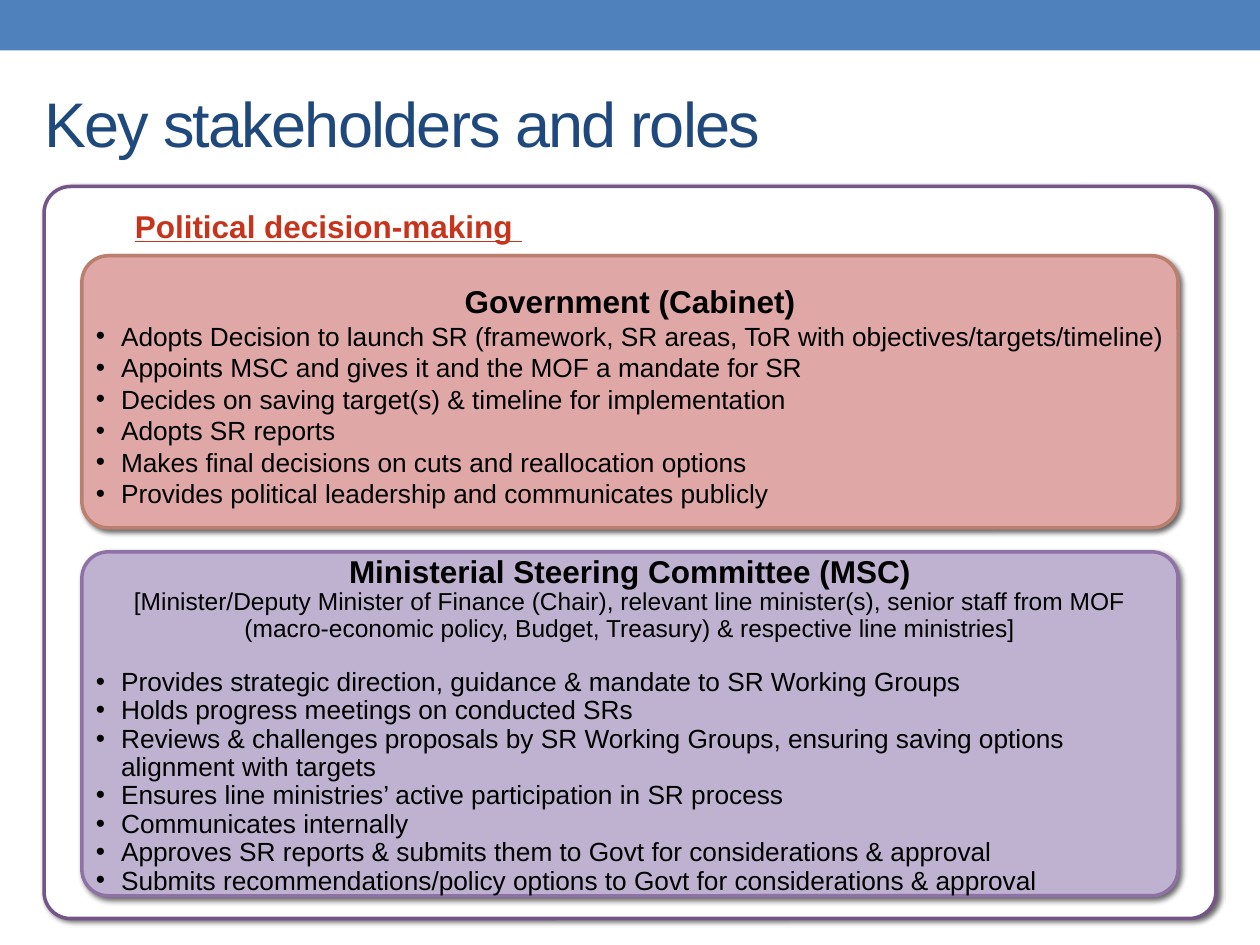
from dataclasses import dataclass

from lxml.etree import SubElement
from pptx import Presentation
from pptx.dml.color import RGBColor
from pptx.enum.shapes import MSO_SHAPE as Shape
from pptx.enum.text import MSO_ANCHOR as Anchor, PP_ALIGN as Align
from pptx.oxml import parse_xml
from pptx.oxml.ns import nsdecls, qn
from pptx.util import Inches, Pt


@dataclass(frozen=True)
class Theme:
    font: str = "Arial"
    band: str = "4F81BD"
    title: str = "1F497D"
    accent: str = "C7341B"
    text: str = "000000"
    frame: tuple = ("FFFFFF", "755587")
    cabinet: tuple = ("DFA7A6", "BA7F6D")
    committee: tuple = ("BFB1D0", "8E71A5")
    title_size: int = 36
    heading_size: int = 18
    bullet_size: int = 15
    note_size: int = 14


THEME = Theme()

CABINET_ROLES = [
    "Adopts Decision to launch SR (framework, SR areas, ToR with objectives/targets/timeline)",
    "Appoints MSC and gives it and the MOF a mandate for SR",
    "Decides on saving target(s) & timeline for implementation",
    "Adopts SR reports",
    "Makes final decisions on cuts and reallocation options",
    "Provides political leadership and communicates publicly",
]
COMMITTEE_MEMBERS = (
    "[Minister/Deputy Minister of Finance (Chair), relevant line minister(s), senior staff from MOF "
    "(macro-economic policy, Budget, Treasury) & respective line ministries]"
)
COMMITTEE_ROLES = [
    "Provides strategic direction, guidance & mandate to SR Working Groups",
    "Holds progress meetings on conducted SRs",
    "Reviews & challenges proposals by SR Working Groups, ensuring saving options alignment with targets",
    "Ensures line ministries’ active participation in SR process",
    "Communicates internally",
    "Approves SR reports & submits them to Govt for considerations & approval",
    "Submits recommendations/policy options to Govt for considerations & approval",
]


def set_font(text, size, color=THEME.text, bold=False):
    """Format a paragraph or a run."""
    font = text.font
    font.name = THEME.font
    font.size = Pt(size)
    font.bold = bold
    font.color.rgb = RGBColor.from_string(color)


def prepare_frame(shape, anchor):
    frame = shape.text_frame
    frame.word_wrap = True
    frame.vertical_anchor = anchor
    frame.margin_left = frame.margin_right = Inches(0.05)
    frame.margin_top = frame.margin_bottom = Inches(0.05)
    return frame


def add_shadow(shape):
    shape._element.spPr.append(parse_xml(
        f'<a:effectLst {nsdecls("a")}><a:outerShdw blurRad="38100" dist="25400" dir="2700000">'
        '<a:srgbClr val="000000"><a:alpha val="60000"/></a:srgbClr></a:outerShdw></a:effectLst>'))


def add_band(slide):
    band = slide.shapes.add_shape(Shape.RECTANGLE, 0, 0, Inches(10), Inches(0.4))
    band.shadow.inherit = False
    band.fill.solid()
    band.fill.fore_color.rgb = RGBColor.from_string(THEME.band)
    band.line.fill.background()


def add_panel(slide, left, top, width, height, colors):
    """Add a rounded, shadowed panel whose corner radius is the same at any size."""
    fill, line = colors
    panel = slide.shapes.add_shape(
        Shape.ROUNDED_RECTANGLE, Inches(left), Inches(top), Inches(width), Inches(height))
    panel.adjustments[0] = 0.21 / height
    panel.fill.solid()
    panel.fill.fore_color.rgb = RGBColor.from_string(fill)
    panel.line.color.rgb = RGBColor.from_string(line)
    panel.line.width = Pt(2)
    add_shadow(panel)
    return panel


def add_title(slide, text):
    title = slide.shapes.title
    title.left, title.top = Inches(0.3), Inches(0.43)
    title.width, title.height = Inches(9), Inches(1.08)
    paragraph = prepare_frame(title, Anchor.MIDDLE).paragraphs[0]
    paragraph.alignment = Align.LEFT
    run = paragraph.add_run()
    run.text = text
    set_font(run, THEME.title_size, THEME.title)
    run.font._element.set("spc", "-100")


def add_section_label(slide, text):
    """Add the underlined label; its font is on the run so that the line takes the text colour."""
    box = slide.shapes.add_textbox(Inches(1.02), Inches(1.59), Inches(4.31), Inches(0.38))
    run = prepare_frame(box, Anchor.TOP).paragraphs[0].add_run()
    run.text = text
    set_font(run, THEME.heading_size, THEME.accent, bold=True)
    run.font.underline = True


def add_heading(frame, text, line_spacing):
    paragraph = frame.paragraphs[0]
    paragraph.text = text
    paragraph.alignment = Align.CENTER
    paragraph.line_spacing = line_spacing
    set_font(paragraph, THEME.heading_size, bold=True)


def add_note(frame, text, line_spacing):
    paragraph = frame.add_paragraph()
    paragraph.text = text
    paragraph.alignment = Align.CENTER
    paragraph.line_spacing = line_spacing
    set_font(paragraph, THEME.note_size)


def add_bullets(frame, items, line_spacing, gap_above=0):
    for index, item in enumerate(items):
        paragraph = frame.add_paragraph()
        paragraph.text = item
        paragraph.alignment = Align.LEFT
        paragraph.line_spacing = line_spacing
        paragraph.space_before = Pt(0 if index else gap_above)
        properties = paragraph._p.get_or_add_pPr()
        properties.set("marL", str(Inches(0.2)))
        properties.set("indent", str(-Inches(0.2)))
        SubElement(properties, qn("a:buFont")).set("typeface", THEME.font)
        SubElement(properties, qn("a:buChar")).set("char", "•")
        set_font(paragraph, THEME.bullet_size)


def main():
    presentation = Presentation()
    presentation.slide_width, presentation.slide_height = Inches(10), Inches(7.5)
    slide = presentation.slides.add_slide(presentation.slide_layouts[5])

    add_band(slide)
    add_title(slide, "Key stakeholders and roles")
    add_panel(slide, 0.35, 1.48, 9.3, 5.81, THEME.frame)
    add_section_label(slide, "Political decision-making ")

    cabinet = add_panel(slide, 0.65, 2.03, 8.7, 2.16, THEME.cabinet)
    frame = prepare_frame(cabinet, Anchor.MIDDLE)
    add_heading(frame, "Government (Cabinet)", 1.2)
    add_bullets(frame, CABINET_ROLES, 1.0)

    committee = add_panel(slide, 0.65, 4.38, 8.7, 2.73, THEME.committee)
    frame = prepare_frame(committee, Anchor.MIDDLE)
    add_heading(frame, "Ministerial Steering Committee (MSC)", 1.0)
    add_note(frame, COMMITTEE_MEMBERS, 0.9)
    add_bullets(frame, COMMITTEE_ROLES, 0.9, gap_above=15)

    presentation.save("out.pptx")


if __name__ == "__main__":
    main()
